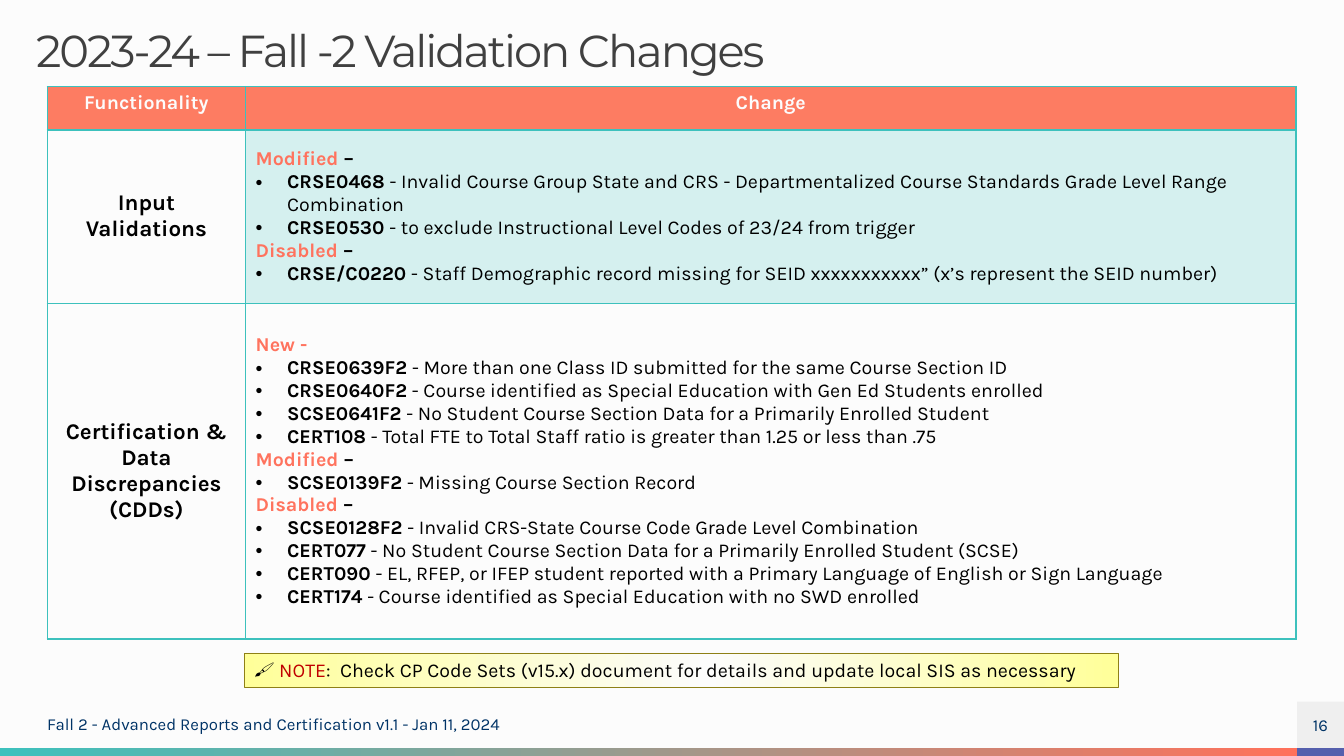
"""Build the Fall 2 validation changes slide."""
import copy
from dataclasses import dataclass

import pptx
import pptx.dml.color
import pptx.enum.shapes
import pptx.enum.text
import pptx.oxml
import pptx.oxml.ns
import pptx.util
from pptx.util import Cm

COLORS = {
    "paper": "FCFCFC", "teal": "3DC1BD", "coral": "FF715B", "heading": "FF735E",
    "header": "FD7C62", "indigo": "555FAD", "navy": "003366", "gray": "EFEFEF",
    "title": "404040", "black": "000000", "red": "C00000",
    "yellow": "FFFF99", "olive": "8E8016",
}
ALIGN = pptx.enum.text.PP_ALIGN
ANCHOR = pptx.enum.text.MSO_ANCHOR
BODY_FONT = "Karla"
BULLET_INDENT = Cm(0.79)
COLUMN_WIDTHS = (5, 26.47)
ROW_HEIGHTS = (1.09, 4.37, 8.46)


@dataclass(frozen=True)
class Span:
    """A stretch of text with one look."""
    text: str
    color: str = "black"
    size: float = 14
    bold: bool = False


@dataclass(frozen=True)
class Box:
    """A rectangle measured in centimetres."""
    left: float
    top: float
    width: float
    height: float

    def lengths(self) -> tuple:
        """Return the position and size as lengths."""
        return Cm(self.left), Cm(self.top), Cm(self.width), Cm(self.height)


@dataclass(frozen=True)
class ChangeGroup:
    """Validations sharing one status heading."""
    status: str
    dash: str
    validations: tuple


@dataclass(frozen=True)
class Functionality:
    """A table row: an area and its changes."""
    name: str
    groups: tuple
    tinted: bool


FUNCTIONALITIES = (
    Functionality("Input Validations", (
        ChangeGroup("Modified", " –", (
            ("CRSE0468", "Invalid Course Group State and CRS - Departmentalized Course "
                         "Standards Grade Level Range Combination"),
            ("CRSE0530", "to exclude Instructional Level Codes of 23/24 from trigger"),
        )),
        ChangeGroup("Disabled", " –", (
            ("CRSE/C0220", "Staff Demographic record missing for SEID xxxxxxxxxxx” "
                           "(x’s represent the SEID number)"),
        )),
    ), True),
    Functionality("Certification & Data Discrepancies (CDDs)", (
        ChangeGroup("New -", "", (
            ("CRSE0639F2", "More than one Class ID submitted for the same Course Section ID"),
            ("CRSE0640F2", "Course identified as Special Education with Gen Ed Students enrolled"),
            ("SCSE0641F2", "No Student Course Section Data for a Primarily Enrolled Student"),
            ("CERT108", "Total FTE to Total Staff ratio is greater than 1.25 or less than .75"),
        )),
        ChangeGroup("Modified", " –", (
            ("SCSE0139F2", "Missing Course Section Record"),
        )),
        ChangeGroup("Disabled", " –", (
            ("SCSE0128F2", "Invalid CRS-State Course Code Grade Level Combination"),
            ("CERT077", "No Student Course Section Data for a Primarily Enrolled Student (SCSE)"),
            ("CERT090", "EL, RFEP, or IFEP student reported with a Primary Language of "
                        "English or Sign Language"),
            ("CERT174", "Course identified as Special Education with no SWD enrolled"),
        )),
    ), False),
)


def rgb(name: str) -> pptx.dml.color.RGBColor:
    """Look up a named colour."""
    return pptx.dml.color.RGBColor.from_string(COLORS[name])


def write(paragraph, *spans: Span, align=ALIGN.LEFT, font: str = BODY_FONT) -> None:
    """Fill a paragraph with formatted spans."""
    paragraph.alignment = align
    for span in spans:
        run = paragraph.add_run()
        run.text = span.text
        run.font.name = font
        run.font.size = pptx.util.Pt(span.size)
        run.font.bold = span.bold
        run.font.color.rgb = rgb(span.color)


def clear_margins(frame) -> None:
    """Remove the insets of a text frame and centre it vertically."""
    frame.margin_left = frame.margin_right = frame.margin_top = frame.margin_bottom = 0
    frame.vertical_anchor = ANCHOR.MIDDLE
    frame.word_wrap = True


def paint(fill, stops: tuple, angle: float) -> None:
    """Apply one colour, or a gradient of (position, colour) stops."""
    if len(stops) == 1:
        fill.solid()
        fill.fore_color.rgb = rgb(stops[0][1])
        return
    fill.gradient()
    fill.gradient_angle = angle
    stop_list = fill.gradient_stops[0]._gs.getparent()
    while len(stop_list) < len(stops):
        stop_list.append(copy.deepcopy(stop_list[0]))
    for stop, (position, color) in zip(fill.gradient_stops, stops):
        stop.position = position
        stop.color.rgb = rgb(color)


def add_panel(slide, box: Box, *stops: tuple, angle: float = 0):
    """Add a plain rectangle without outline."""
    panel = slide.shapes.add_shape(pptx.enum.shapes.MSO_SHAPE.RECTANGLE, *box.lengths())
    panel.shadow.inherit = False
    panel.line.fill.background()
    paint(panel.fill, stops, angle)
    return panel


def add_borders(cell, bottom: float) -> None:
    """Draw teal borders around a cell; the bottom width is in points."""
    properties = cell._tc.get_or_add_tcPr()
    for index, (side, width) in enumerate(zip("LRTB", (1, 1, 1, bottom))):
        properties.insert(index, pptx.oxml.parse_xml(
            f'<a:ln{side} {pptx.oxml.ns.nsdecls("a")} w="{pptx.util.Pt(width)}"><a:solidFill>'
            f'<a:srgbClr val="{COLORS["teal"]}"/></a:solidFill></a:ln{side}>'))


def make_bullet(paragraph) -> None:
    """Give a paragraph a hanging bullet."""
    properties = paragraph._p.get_or_add_pPr()
    properties.set("marL", str(BULLET_INDENT))
    properties.set("indent", str(-BULLET_INDENT))
    properties.append(pptx.oxml.parse_xml(
        f'<a:buFont {pptx.oxml.ns.nsdecls("a")} typeface="Arial"/>'))
    properties.append(pptx.oxml.parse_xml(
        f'<a:buChar {pptx.oxml.ns.nsdecls("a")} char="•"/>'))


def write_changes(frame, groups: tuple) -> None:
    """List each status heading with its validations."""
    for number, group in enumerate(groups):
        heading = frame.add_paragraph() if number else frame.paragraphs[0]
        write(heading, Span(group.status, "heading", bold=True), Span(group.dash, bold=True))
        for code, detail in group.validations:
            entry = frame.add_paragraph()
            make_bullet(entry)
            write(entry, Span(code, bold=True), Span(f" - {detail}"))


def add_change_table(slide) -> None:
    """Add the table of functionalities and their changes."""
    box = Box(1.19, 2.18, sum(COLUMN_WIDTHS), sum(ROW_HEIGHTS))
    table = slide.shapes.add_table(len(ROW_HEIGHTS), len(COLUMN_WIDTHS), *box.lengths()).table
    table.first_row = table.horz_banding = False
    for column, width in zip(table.columns, COLUMN_WIDTHS):
        column.width = Cm(width)
    for row, height in zip(table.rows, ROW_HEIGHTS):
        row.height = Cm(height)
    for cell, label in zip(table.rows[0].cells, ("Functionality", "Change")):
        paint(cell.fill, ((0, "header"),), 0)
        add_borders(cell, bottom=2)
        write(cell.text_frame.paragraphs[0], Span(label, "paper", bold=True), align=ALIGN.CENTER)
    for number, functionality in enumerate(FUNCTIONALITIES, start=1):
        area, changes = table.rows[number].cells
        for cell in (area, changes):
            cell.vertical_anchor = ANCHOR.MIDDLE
            cell.fill.background()
        if functionality.tinted:
            paint(changes.fill, ((0, "teal"),), 0)
            tint = changes._tc.tcPr.find(".//" + pptx.oxml.ns.qn("a:srgbClr"))
            tint.append(pptx.oxml.parse_xml(
                f'<a:alpha {pptx.oxml.ns.nsdecls("a")} val="20000"/>'))
        for cell in (area, changes):
            add_borders(cell, bottom=1)
        write(area.text_frame.paragraphs[0], Span(functionality.name, size=16, bold=True),
              align=ALIGN.CENTER)
        write_changes(changes.text_frame, functionality.groups)


def add_title(slide) -> None:
    """Place and format the slide title."""
    title = slide.shapes.title
    title.left, title.top, title.width, title.height = Box(0.91, 0.74, 31.5, 1.19).lengths()
    clear_margins(title.text_frame)
    title.text_frame.auto_size = pptx.enum.text.MSO_AUTO_SIZE.NONE
    heading = title.text_frame.paragraphs[0]
    heading.line_spacing = 0.9
    write(heading, Span("2023-24 – Fall -2 Validation Changes", "title", 32), font="Montserrat")
    heading.runs[0].font._element.set("spc", "-150")


def add_footer(slide) -> None:
    """Add the footer bars, document line and slide number."""
    add_panel(slide, Box(0, 18.85, 32.69, 0.2), (0, "teal"), (1, "coral"))
    add_panel(slide, Box(32.69, 18.85, 1.18, 0.2), (0, "indigo"))
    document = slide.shapes.add_textbox(*Box(1.19, 17.68, 15.19, 1.14).lengths())
    number = add_panel(slide, Box(32.69, 17.68, 1.18, 1.17), (0, "gray"))
    for shape, text, align in (
        (document, "Fall 2 - Advanced Reports and Certification v1.1 - Jan 11, 2024", ALIGN.LEFT),
        (number, "16", ALIGN.CENTER),
    ):
        clear_margins(shape.text_frame)
        write(shape.text_frame.paragraphs[0], Span(text, "navy", 12), align=align)


def add_note(slide) -> None:
    """Add the highlighted note under the table."""
    note = add_panel(slide, Box(6.17, 16.46, 22.02, 0.86),
                     (0, "yellow"), (0.47, "paper"), (1, "yellow"), angle=180)
    note.line.color.rgb = rgb("olive")
    note.line.width = pptx.util.Pt(0.5)
    note.text_frame.word_wrap = True
    note.text_frame.vertical_anchor = ANCHOR.TOP
    note.text_frame.auto_size = pptx.enum.text.MSO_AUTO_SIZE.SHAPE_TO_FIT_TEXT
    write(note.text_frame.paragraphs[0], Span("🖌 "), Span("NOTE", "red"),
          Span(":  Check CP Code Sets (v15.x) document for details and update local SIS as necessary"))


def main() -> None:
    """Create and save the presentation."""
    presentation = pptx.Presentation()
    presentation.slide_width, presentation.slide_height = Cm(33.87), Cm(19.05)
    slide = presentation.slides.add_slide(presentation.slide_layouts.get_by_name("Title Only"))
    paint(slide.background.fill, ((0, "paper"),), 0)
    add_title(slide)
    add_change_table(slide)
    add_footer(slide)
    add_note(slide)
    presentation.save("out.pptx")


if __name__ == "__main__":
    main()
